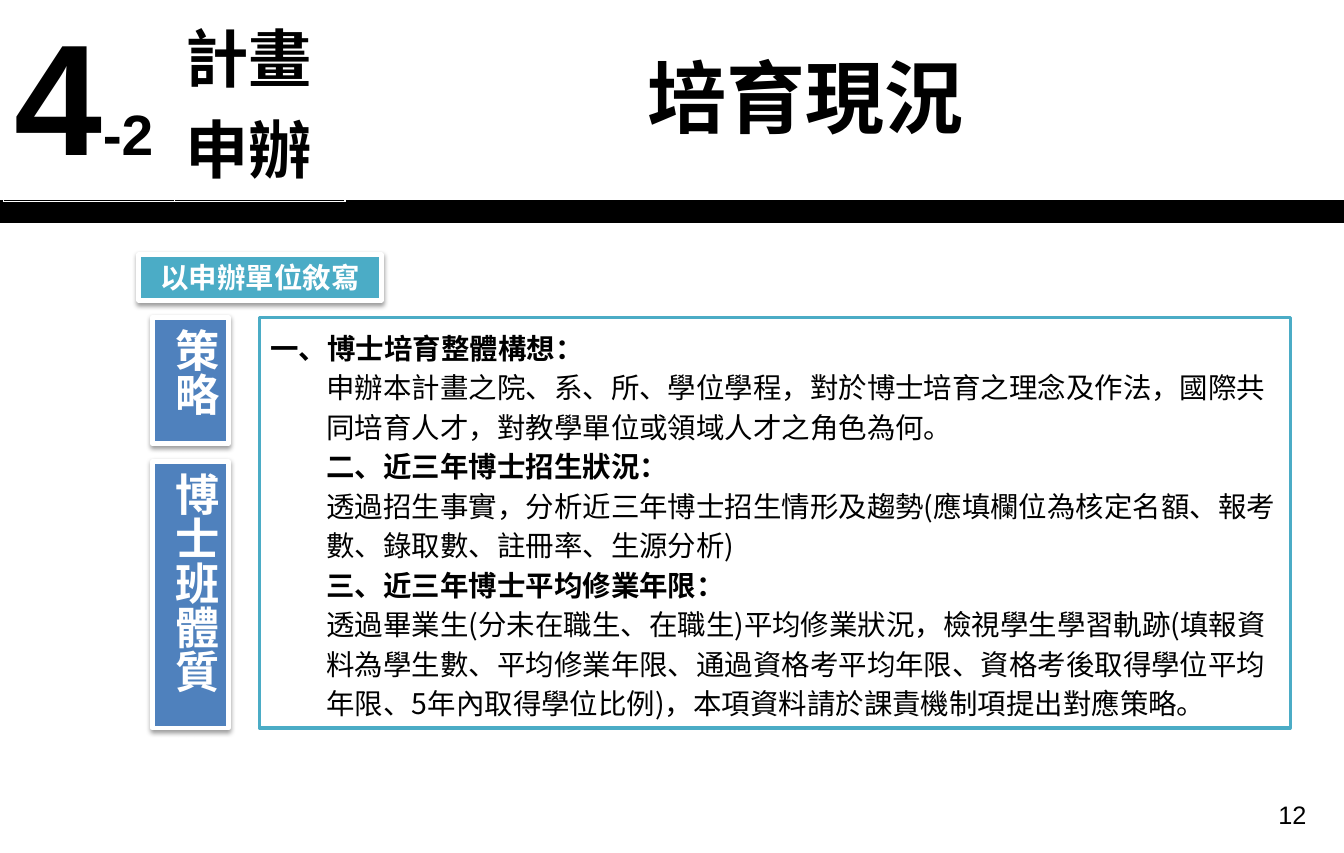
"""Build the slide on the current state of doctoral training."""
from dataclasses import dataclass

from lxml.etree import SubElement
from pptx import Presentation
from pptx.dml.color import RGBColor
from pptx.enum.shapes import MSO_CONNECTOR, MSO_SHAPE
from pptx.enum.text import MSO_ANCHOR, MSO_AUTO_SIZE, PP_ALIGN
from pptx.oxml.ns import qn
from pptx.shapes.autoshape import Shape
from pptx.slide import Slide
from pptx.text.text import Font, TextFrame
from pptx.util import Cm, Pt

LATIN, CJK = "Arial", "Noto Sans CJK SC"
BLACK, WHITE, TEAL, BLUE = "000000", "FFFFFF", "4BACC6", "4F81BD"
SLIDE_WIDTH, SLIDE_HEIGHT = 30, 19.05
BODY_TOP, BODY_BOTTOM = 7.09, 16.26


@dataclass(frozen=True)
class Box:
    left: float
    top: float
    width: float
    height: float

    def lengths(self) -> tuple[Cm, Cm, Cm, Cm]:
        return Cm(self.left), Cm(self.top), Cm(self.width), Cm(self.height)


@dataclass(frozen=True)
class Label:
    text: str
    box: Box
    fill: str
    size: int
    vertical: bool = False


@dataclass(frozen=True)
class Section:
    heading: str
    body: str
    heading_indent: float


INDENT = 1.25

LABELS = (
    Label("以申辦單位敘寫", Box(3.1, 5.69, 5.41, 1.02), TEAL, 18),
    Label("策略", Box(3.4, BODY_TOP, 1.7, 2.82), BLUE, 28, vertical=True),
    Label("博士班體質", Box(3.4, 10.31, 1.7, BODY_BOTTOM - 10.31), BLUE, 28, vertical=True),
)

SECTIONS = (
    Section(
        "一、博士培育整體構想：",
        "申辦本計畫之院、系、所、學位學程，對於博士培育之理念及作法，"
        "國際共同培育人才，對教學單位或領域人才之角色為何。",
        0,
    ),
    Section(
        "二、近三年博士招生狀況：",
        "透過招生事實，分析近三年博士招生情形及趨勢"
        "(應填欄位為核定名額、報考數、錄取數、註冊率、生源分析)",
        INDENT,
    ),
    Section(
        "三、近三年博士平均修業年限：",
        "透過畢業生(分未在職生、在職生)平均修業狀況，檢視學生學習軌跡"
        "(填報資料為學生數、平均修業年限、通過資格考平均年限、"
        "資格考後取得學位平均年限、5年內取得學位比例)，"
        "本項資料請於課責機制項提出對應策略。",
        INDENT,
    ),
)


def rgb(value: str) -> RGBColor:
    return RGBColor.from_string(value)


def style_font(font: Font, face: str, size: int, color: str = BLACK, bold: bool = True) -> None:
    font.name, font.size, font.bold = face, Pt(size), bold
    font.color.rgb = rgb(color)


def style_runs(frame: TextFrame, face: str, size: int, color: str = BLACK, bold: bool = True) -> None:
    for paragraph in frame.paragraphs:
        for run in paragraph.runs:
            style_font(run.font, face, size, color, bold)
            SubElement(run.font._element, qn("a:ea"), typeface=CJK)


def add_panel(slide: Slide, box: Box, fill: str, line: str, line_width: float) -> Shape:
    panel = slide.shapes.add_shape(MSO_SHAPE.RECTANGLE, *box.lengths())
    panel.shadow.inherit = False
    panel.fill.solid()
    panel.fill.fore_color.rgb = rgb(fill)
    panel.line.color.rgb = rgb(line)
    panel.line.width = Pt(line_width)
    return panel


def add_drop_shadow(panel: Shape) -> None:
    effects = panel.element.spPr.find(qn("a:effectLst"))
    shadow = SubElement(
        effects, qn("a:outerShdw"), blurRad=str(Pt(3.1)), dist=str(Pt(1.6)),
        dir="5400000", rotWithShape="0",
    )
    color = SubElement(shadow, qn("a:srgbClr"), val=BLACK)
    SubElement(color, qn("a:alpha"), val="38000")


def add_label(slide: Slide, label: Label) -> None:
    panel = add_panel(slide, label.box, label.fill, WHITE, 3)
    add_drop_shadow(panel)
    frame = panel.text_frame
    frame.text = label.text
    frame.word_wrap = True
    frame.paragraphs[0].alignment = PP_ALIGN.CENTER
    if label.vertical:
        panel.element.txBody.bodyPr.set("vert", "eaVert")
        frame.paragraphs[0].alignment = PP_ALIGN.LEFT
        frame.vertical_anchor = MSO_ANCHOR.TOP
    style_runs(frame, CJK, label.size, WHITE)


def add_sections(slide: Slide) -> None:
    panel = add_panel(slide, Box(5.79, BODY_TOP, 23.01, BODY_BOTTOM - BODY_TOP), WHITE, TEAL, 2)
    frame = panel.text_frame
    frame.word_wrap = True
    rows = [
        row
        for section in SECTIONS
        for row in ((section.heading, section.heading_indent, True), (section.body, INDENT, False))
    ]
    frame.text = "\n".join(text for text, _, _ in rows)
    style_runs(frame, CJK, 18)
    for paragraph, (_, indent, bold) in zip(frame.paragraphs, rows):
        paragraph.alignment = PP_ALIGN.LEFT
        paragraph.line_spacing = Pt(25)
        paragraph.runs[0].font.bold = bold
        properties = paragraph._p.get_or_add_pPr()
        properties.set("marL", str(Cm(indent)))
        properties.set("indent", "0")


def add_chapter(slide: Slide) -> None:
    chapter = slide.shapes.add_table(1, 2, *Box(0.08, 0, 7.62, 4.5).lengths()).table
    chapter.first_row = chapter.horz_banding = False
    number, name = chapter.cell(0, 0), chapter.cell(0, 1)
    number.text, name.text = "4", "計畫申辦"
    number.text_frame.paragraphs[0].add_run().text = "-2"
    for cell, face, size in ((number, LATIN, 100), (name, CJK, 40)):
        cell.fill.background()
        cell.vertical_anchor = MSO_ANCHOR.MIDDLE
        style_runs(cell.text_frame, face, size)
    number.text_frame.paragraphs[0].runs[1].font.size = Pt(36)


def add_title(slide: Slide) -> None:
    title = slide.shapes.title
    title.left, title.top, title.width, title.height = Box(14.2, 0.94, 14.73, 2.39).lengths()
    frame = title.text_frame
    frame.text = "培育現況"
    frame.auto_size = MSO_AUTO_SIZE.NONE
    frame.vertical_anchor = MSO_ANCHOR.MIDDLE
    frame.paragraphs[0].alignment = PP_ALIGN.LEFT
    style_runs(frame, CJK, 50)


def add_rule(slide: Slide) -> None:
    rule = slide.shapes.add_connector(
        MSO_CONNECTOR.STRAIGHT, Cm(0), Cm(4.72), Cm(SLIDE_WIDTH), Cm(4.72)
    )
    rule.line.color.rgb = rgb(BLACK)
    rule.line.width = Pt(15)
    SubElement(rule.element.spPr, qn("a:effectLst"))


def add_page_number(slide: Slide) -> None:
    frame = slide.shapes.add_textbox(*Box(22.4, 17.73, 7.01, 1.32).lengths()).text_frame
    frame.text = "12"
    frame.word_wrap = True
    frame.paragraphs[0].alignment = PP_ALIGN.RIGHT
    style_runs(frame, LATIN, 16, bold=False)


def main() -> None:
    deck = Presentation()
    deck.slide_width, deck.slide_height = Cm(SLIDE_WIDTH), Cm(SLIDE_HEIGHT)
    slide = deck.slides.add_slide(deck.slide_layouts[5])
    add_rule(slide)
    add_page_number(slide)
    add_title(slide)
    add_sections(slide)
    for label in LABELS:
        add_label(slide, label)
    add_chapter(slide)
    deck.save("out.pptx")


if __name__ == "__main__":
    main()
